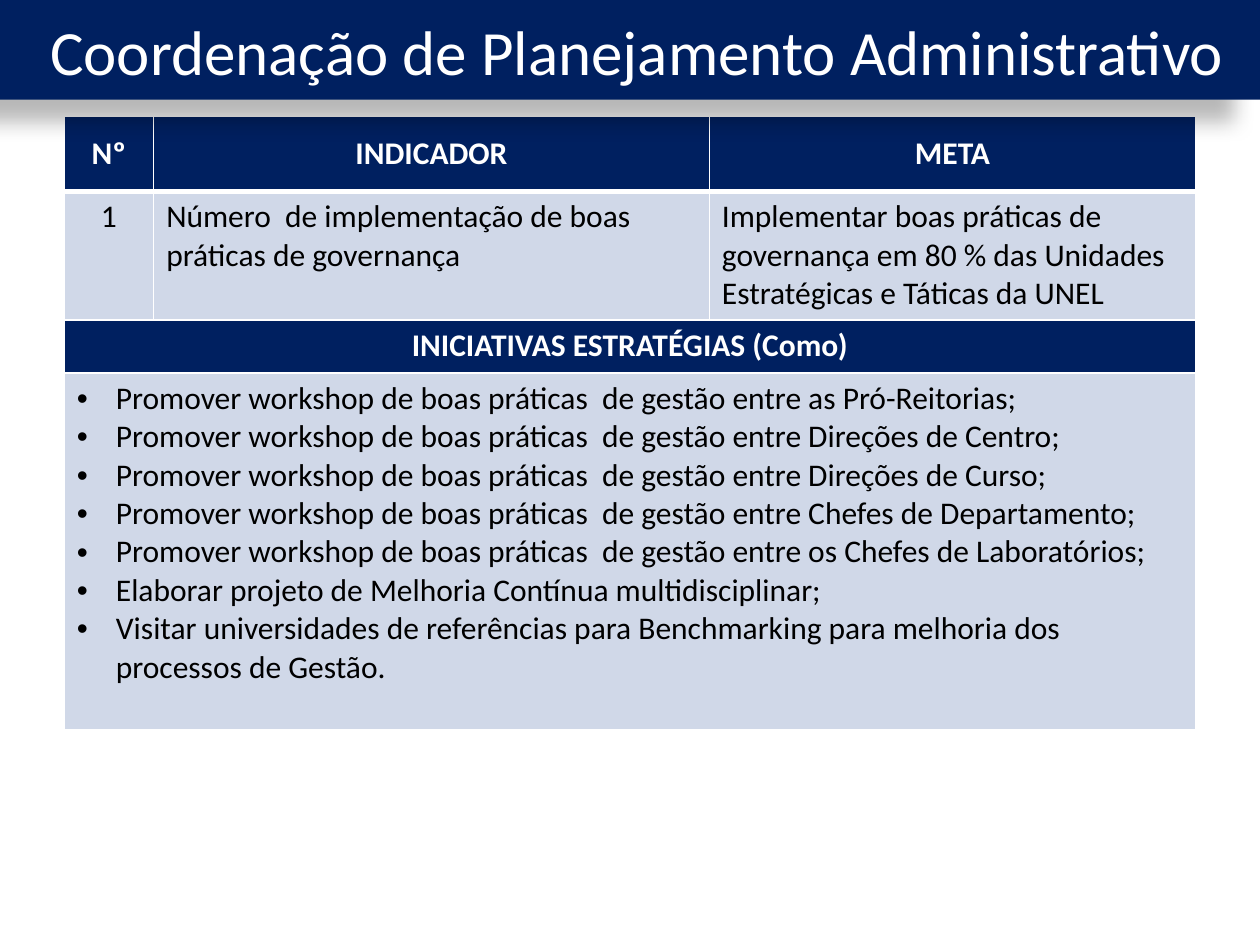
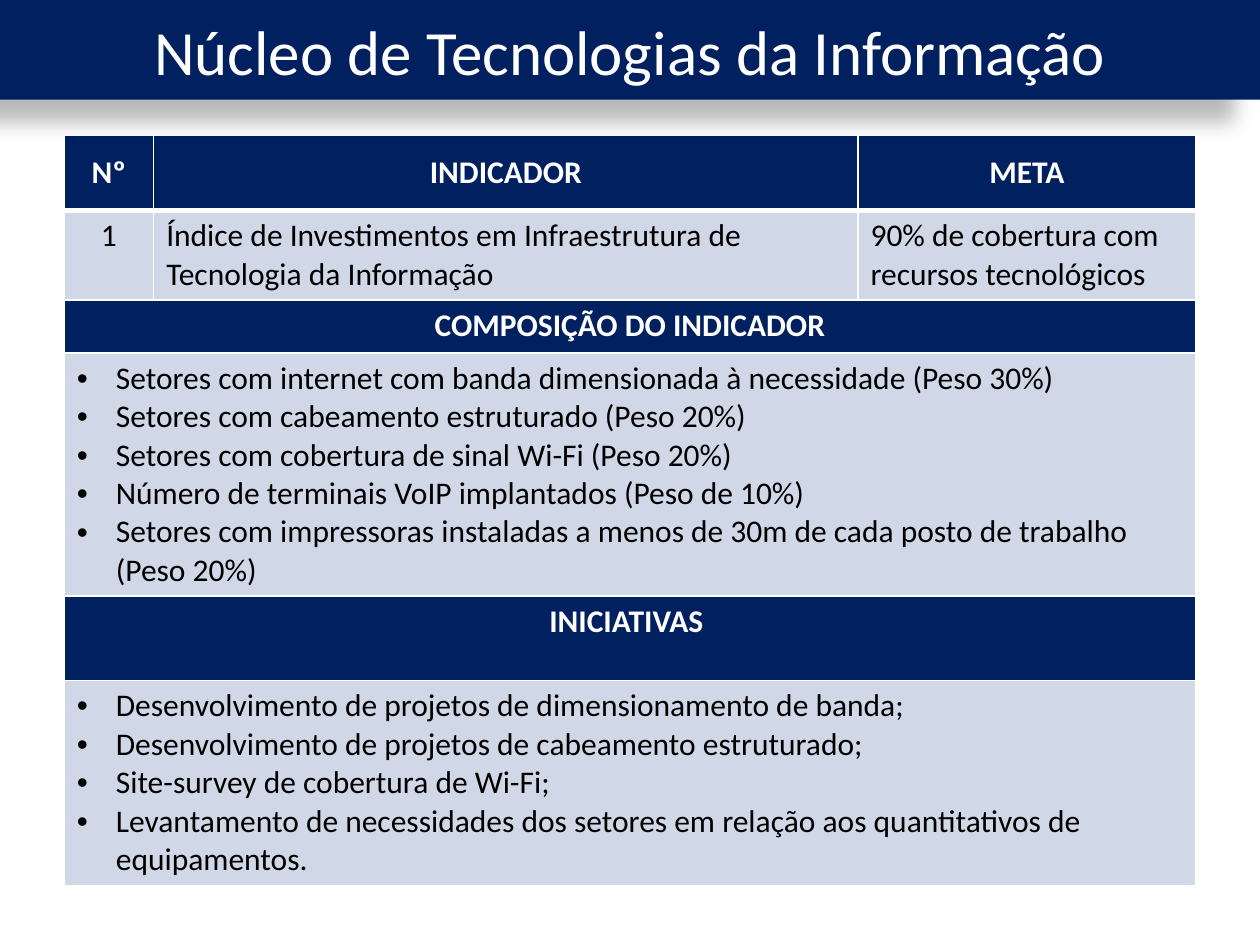
from dataclasses import dataclass
from lxml.etree import SubElement
from pptx import Presentation
from pptx.dml.color import RGBColor
from pptx.enum.shapes import MSO_SHAPE as Shape
from pptx.enum.text import MSO_ANCHOR as Anchor, PP_ALIGN as Align
from pptx.oxml.ns import qn
from pptx.util import Inches, Pt

# Content: sections are (heading, heading height, bullets, bullets height)
HEADERS = ["Nº", "INDICADOR", "META"]
PAGES = [
    {
        "title": " Coordenação de Planejamento Administrativo",
        "top": 0.92,
        "columns": [0.71, 4.41, 3.86],
        "goal": ["1",
                 "Número  de implementação de boas práticas de governança",
                 "Implementar boas práticas de governança em 80 % das Unidades "
                 "Estratégicas e Táticas da UNEL"],
        "goal_height": 1.02,
        "sections": [
            ("INICIATIVAS ESTRATÉGIAS (Como)", 0.42, [
                "Promover workshop de boas práticas  de gestão entre as Pró-Reitorias;",
                "Promover workshop de boas práticas  de gestão entre Direções de Centro;",
                "Promover workshop de boas práticas  de gestão entre Direções de Curso;",
                "Promover workshop de boas práticas  de gestão entre Chefes de Departamento;",
                "Promover workshop de boas práticas  de gestão entre os Chefes de Laboratórios;",
                "Elaborar projeto de Melhoria Contínua multidisciplinar;",
                "Visitar universidades de referências para Benchmarking para melhoria "
                "dos processos de Gestão.",
            ], 2.83),
        ],
    },
    {
        "title": "Núcleo de Tecnologias da Informação",
        "top": 1.07,
        "columns": [0.71, 5.59, 2.68],
        "goal": ["1",
                 "Índice de Investimentos em Infraestrutura de Tecnologia da Informação",
                 "90% de cobertura com recursos tecnológicos"],
        "goal_height": 0.71,
        "sections": [
            ("COMPOSIÇÃO DO INDICADOR", 0.42, [
                "Setores com internet com banda dimensionada à necessidade (Peso 30%)",
                "Setores com cabeamento estruturado (Peso 20%)",
                "Setores com cobertura de sinal Wi-Fi (Peso 20%)",
                "Número de terminais VoIP implantados (Peso de 10%)",
                "Setores com impressoras instaladas a menos de 30m de cada posto de "
                "trabalho (Peso 20%)",
            ], 1.93),
            ("INICIATIVAS ", 0.67, [
                "Desenvolvimento de projetos de dimensionamento de banda;",
                "Desenvolvimento de projetos de cabeamento estruturado;",
                "Site-survey de cobertura de Wi-Fi;",
                "Levantamento de necessidades dos setores em relação aos "
                "quantitativos de equipamentos.",
            ], 1.63),
        ],
    },
]


@dataclass(frozen=True)
class Theme:
    navy: str = "002060"
    pale: str = "D0D8E8"
    white: str = "FFFFFF"
    black: str = "000000"
    font: str = "Calibri"
    title_size: int = 36
    table_size: int = 18


THEME = Theme()
PAGE_WIDTH, PAGE_HEIGHT = 10, 7.5
BAND_HEIGHT = 0.79
TABLE_LEFT = 0.51
HEADER_HEIGHT = 0.6
BULLET_INDENT = Inches(0.31)


def color(value):
    return RGBColor.from_string(value)


def write(frame, *lines, size=THEME.table_size, fill=THEME.black, bold=False,
          align=Align.LEFT, bullets=False):
    """Put one paragraph per line into a text frame."""
    frame.word_wrap = True
    for index, line in enumerate(lines):
        para = frame.add_paragraph() if index else frame.paragraphs[0]
        para.alignment = align
        span = para.add_run()
        span.text = line
        span.font.name, span.font.size, span.font.bold = THEME.font, Pt(size), bold
        span.font.color.rgb = color(fill)
        if bullets:
            props = para._p.get_or_add_pPr()
            props.set("marL", str(BULLET_INDENT))
            props.set("indent", str(-BULLET_INDENT))
            SubElement(props, qn("a:buFont"), typeface="Arial")
            SubElement(props, qn("a:buChar"), char="•")


def paint_cell(cell, fill, bottom=1):
    """Give a cell white borders and a solid fill."""
    props = cell._tc.get_or_add_tcPr()
    for side, width in (("L", 1), ("R", 1), ("T", 1), ("B", bottom)):
        line = SubElement(props, qn(f"a:ln{side}"), w=str(Pt(width)))
        SubElement(SubElement(line, qn("a:solidFill")), qn("a:srgbClr"), val=THEME.white)
    cell.fill.solid()
    cell.fill.fore_color.rgb = color(fill)


def add_title_band(page, title):
    band = page.shapes.add_shape(Shape.RECTANGLE, 0, 0, Inches(PAGE_WIDTH),
                                 Inches(BAND_HEIGHT))
    band.fill.solid()
    band.fill.fore_color.rgb = color(THEME.navy)
    band.line.fill.background()
    band.shadow.inherit = False
    # Soft shadow falling to the lower left
    effects = band._element.spPr.find(qn("a:effectLst"))
    shadow = SubElement(effects, qn("a:outerShdw"), blurRad=str(Pt(11.8)),
                        dist=str(Pt(19.7)), dir=str(141 * 60000), rotWithShape="0")
    tint = SubElement(shadow, qn("a:srgbClr"), val=THEME.black)
    SubElement(tint, qn("a:alpha"), val="28000")
    band.text_frame.vertical_anchor = Anchor.MIDDLE
    write(band.text_frame, title, size=THEME.title_size, fill=THEME.white,
          align=Align.CENTER)


def add_plan_table(page, plan):
    heights = [HEADER_HEIGHT, plan["goal_height"]]
    for _, heading_height, _, list_height in plan["sections"]:
        heights += [heading_height, list_height]
    table = page.shapes.add_table(
        len(heights), len(HEADERS), Inches(TABLE_LEFT), Inches(plan["top"]),
        Inches(sum(plan["columns"])), Inches(sum(heights))).table
    for column, width in zip(table.columns, plan["columns"]):
        column.width = Inches(width)

    # Even rows are headings, odd rows hold the details
    for index, (row, height) in enumerate(zip(table.rows, heights)):
        row.height = Inches(height)
        for cell in row.cells:
            paint_cell(cell, THEME.pale if index % 2 else THEME.navy,
                       bottom=1 if index else 3)

    # Indicator and goal
    heading = {"fill": THEME.white, "bold": True, "align": Align.CENTER}
    for index, (header, value) in enumerate(zip(HEADERS, plan["goal"])):
        top_cell = table.cell(0, index)
        top_cell.vertical_anchor = Anchor.MIDDLE
        write(top_cell.text_frame, header, **heading)
        write(table.cell(1, index).text_frame, value,
              align=Align.LEFT if index else Align.CENTER)

    # Full-width sections
    last = len(HEADERS) - 1
    for index, (name, _, items, _) in enumerate(plan["sections"], start=1):
        for row in (2 * index, 2 * index + 1):
            table.cell(row, 0).merge(table.cell(row, last))
        write(table.cell(2 * index, 0).text_frame, name, **heading)
        write(table.cell(2 * index + 1, 0).text_frame, *items, bullets=True)


def main():
    deck = Presentation()
    deck.slide_width, deck.slide_height = Inches(PAGE_WIDTH), Inches(PAGE_HEIGHT)
    for plan in PAGES:
        page = deck.slides.add_slide(deck.slide_layouts[6])
        add_plan_table(page, plan)
        add_title_band(page, plan["title"])
    deck.save("out.pptx")


if __name__ == "__main__":
    main()
